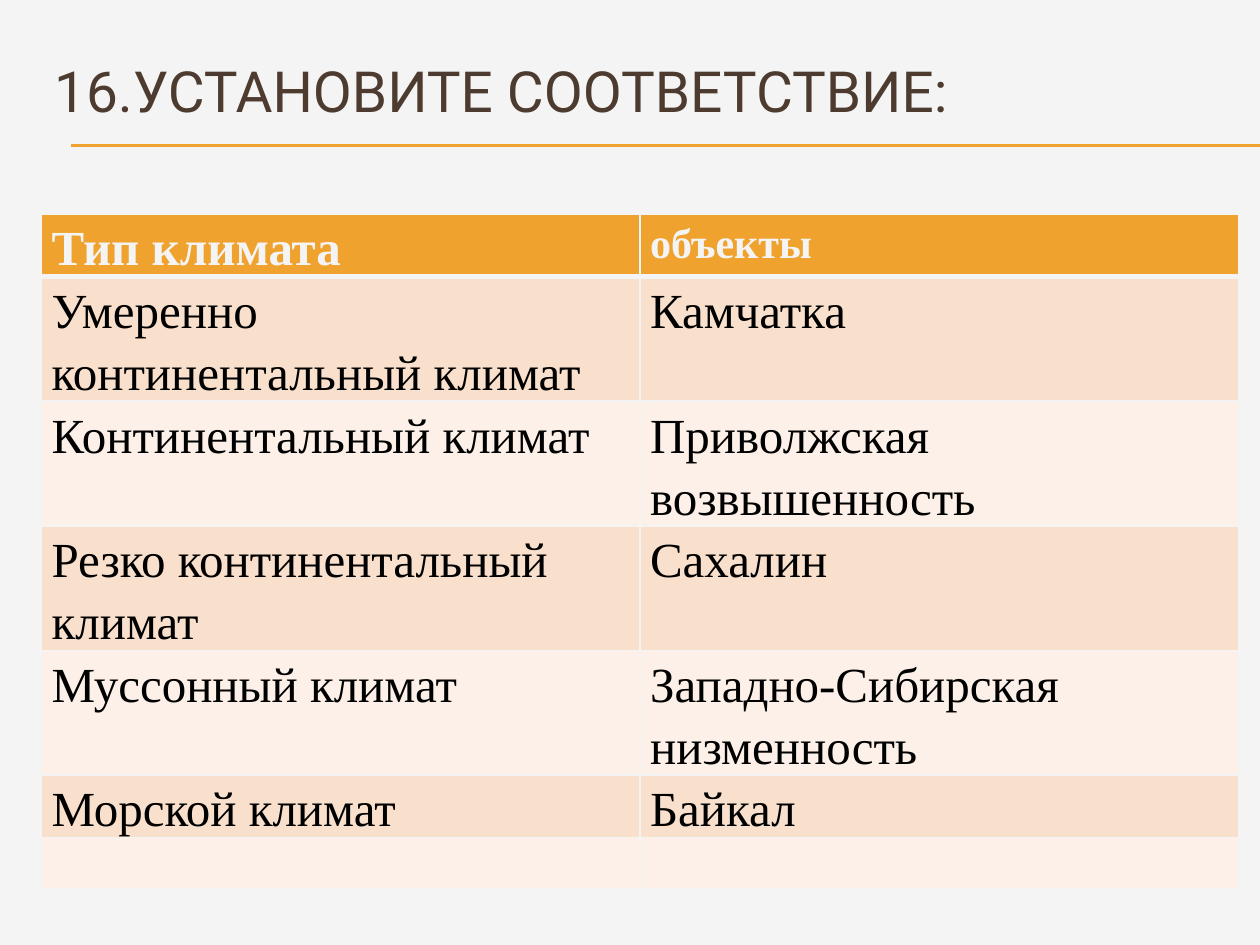
from pptx import Presentation
from pptx.dml.color import RGBColor
from pptx.enum.text import MSO_ANCHOR, PP_ALIGN
from pptx.oxml.ns import qn
from pptx.util import Inches, Pt
from lxml.etree import SubElement

PALE = RGBColor(0xF4, 0xF4, 0xF4)
GOLD = RGBColor(0xF0, 0xA2, 0x2E)
BROWN = RGBColor(0x4E, 0x3B, 0x30)
BLACK = RGBColor(0, 0, 0)
PEACH = RGBColor(0xF9, 0xE0, 0xCD)
CREAM = RGBColor(0xFC, 0xF0, 0xE8)

ROWS = [
    ("Тип климата", "объекты"),
    ("Умеренно континентальный климат", "Камчатка"),
    ("Континентальный климат", "Приволжская возвышенность"),
    ("Резко континентальный климат", "Сахалин"),
    ("Муссонный климат", "Западно-Сибирская низменность"),
    ("Морской климат", "Байкал"),
    ("", ""),
]


class Deck:
    head = "Roboto"
    body = "Times New Roman"

    def __init__(self):
        self.prs = Presentation()
        self.prs.slide_width = Inches(10)
        self.prs.slide_height = Inches(7.5)
        self.slide = self.prs.slides.add_slide(self.prs.slide_layouts[5])
        fill = self.slide.background.fill
        fill.solid()
        fill.fore_color.rgb = PALE

    def style(self, font, name, size, color, bold=False):
        font.name, font.size, font.bold = name, Pt(size), bold
        font.color.rgb = color

    def title(self, text):
        box = self.slide.shapes.title
        box.left, box.top = Inches(0.33), Inches(0.5)
        box.width, box.height = Inches(9.5), Inches(0.92)
        frame = box.text_frame
        frame.text = text
        frame.word_wrap = True
        frame.vertical_anchor = MSO_ANCHOR.MIDDLE
        frame.margin_top, frame.margin_bottom = 0, Inches(0.5)
        para = frame.paragraphs[0]
        para.alignment = PP_ALIGN.LEFT
        self.style(para.runs[0].font, self.head, 32.4, BROWN)

    def rule(self, left, right, top):
        line = self.slide.shapes.add_connector(
            1, Inches(left), Inches(top), Inches(right), Inches(top))
        line.line.color.rgb = GOLD
        line.line.width = Pt(0.75)
        SubElement(line.element.spPr, qn("a:effectLst"))

    def edge(self, cell, side, width):
        props = cell._tc.get_or_add_tcPr()
        line = SubElement(props, qn("a:ln" + side), w=str(Pt(width)))
        fill = SubElement(line, qn("a:solidFill"))
        SubElement(fill, qn("a:srgbClr"), val=str(PALE))

    def cell(self, cell, text, row, size):
        for side in "LRTB":
            thick = (row, side) in ((0, "B"), (1, "T"))
            self.edge(cell, side, 3 if thick else 1)
        cell.fill.solid()
        cell.fill.fore_color.rgb = (
            GOLD if row == 0 else PEACH if row % 2 else CREAM)
        if not text:
            return
        cell.margin_left = cell.margin_right = Inches(0.08)
        cell.margin_top = cell.margin_bottom = 0
        cell.text_frame.text = text
        para = cell.text_frame.paragraphs[0]
        para.line_spacing = 1.15
        self.style(para.runs[0].font, self.body, size,
                   BLACK if row else PALE, row == 0)

    def table(self, rows):
        high = 0.41
        grid = self.slide.shapes.add_table(
            len(rows), 2, Inches(0.33), Inches(1.7),
            Inches(9.5), Inches(high * len(rows))).table
        for r, texts in enumerate(rows):
            grid.rows[r].height = Inches(high)
            for c, text in enumerate(texts):
                size = 24 if (r, c) == (0, 1) else 28
                self.cell(grid.cell(r, c), text, r, size)


def main():
    deck = Deck()
    for top in (1.15, 1.16):
        deck.rule(0.56, 10, top)
    deck.title("16.УСТАНОВИТЕ СООТВЕТСТВИЕ:")
    deck.table(ROWS)
    deck.prs.save("out.pptx")


if __name__ == "__main__":
    main()
